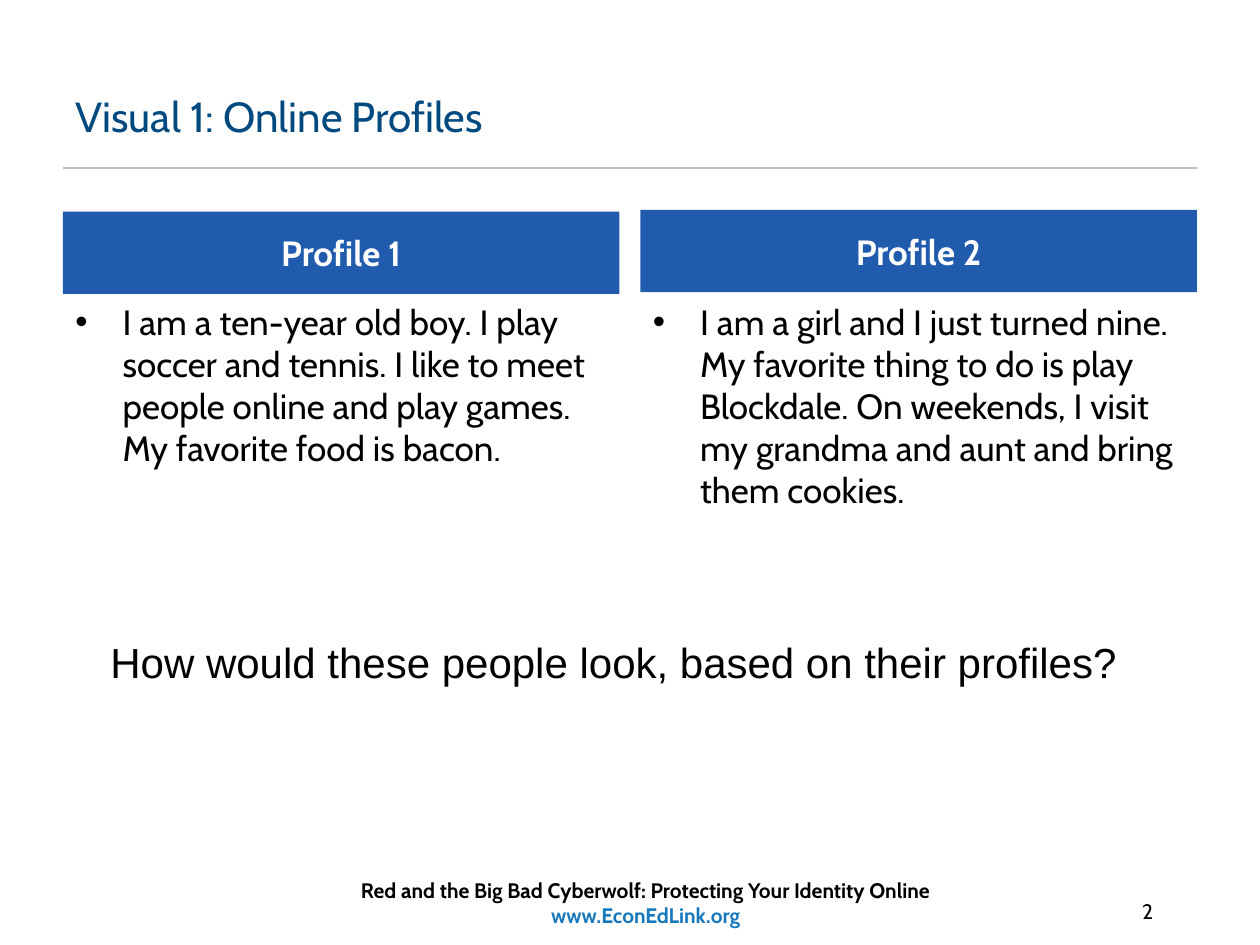
from lxml import etree
from pptx import Presentation
from pptx.dml.color import RGBColor
from pptx.enum.shapes import MSO_CONNECTOR, MSO_SHAPE
from pptx.enum.text import MSO_ANCHOR, MSO_AUTO_SIZE, PP_ALIGN
from pptx.oxml.ns import qn
from pptx.util import Pt

LEFT, MID, RIGHT = PP_ALIGN.LEFT, PP_ALIGN.CENTER, PP_ALIGN.RIGHT
TOP, CENTER = MSO_ANCHOR.TOP, MSO_ANCHOR.MIDDLE
RECT, LINE = MSO_SHAPE.RECTANGLE, MSO_CONNECTOR.STRAIGHT
FIT, FIXED = MSO_AUTO_SIZE.SHAPE_TO_FIT_TEXT, MSO_AUTO_SIZE.NONE

TITLE = "Visual 1: Online Profiles"
CARDS = [
    ("Profile 1", 121, "I am a ten-year old boy. I play soccer and tennis. "
     "I like to meet people online and play games. My favorite food is bacon."),
    ("Profile 2", 120, "I am a girl and I just turned nine. My favorite thing to do "
     "is play Blockdale. On weekends, I visit my grandma and aunt and bring them cookies."),
]
ASK = "How would these people look, based on their profiles?"
FOOT = [("Red and the Big Bad Cyberwolf: Protecting Your Identity Online", "000000", True),
        ("www.EconEdLink.org", "1578BC", True)]
PAGE = "2"
EDGE, WIDE, CARD, HEAD, BODY, INDENT = 36, 648, 318, 47, 168, 27


def color(code):
    """Turn a hex string into a colour."""
    return RGBColor.from_string(code)


def place(shape, x, y, w, h):
    """Move and size a shape in points."""
    shape.left, shape.top, shape.width, shape.height = Pt(x), Pt(y), Pt(w), Pt(h)


def write(shape, text, size=20, font="Cabin", ink="000000", bold=False,
          align=LEFT, anchor=TOP, wrap=True, fit=FIXED, bullet=False):
    """Fill a shape with a string or with (text, ink, bold) paragraphs."""
    frame = shape.text_frame
    frame.word_wrap, frame.auto_size, frame.vertical_anchor = wrap, fit, anchor
    rows = [(text, ink, bold)] if isinstance(text, str) else text
    for i, (words, tint, heavy) in enumerate(rows):
        para = frame.add_paragraph() if i else frame.paragraphs[0]
        para.alignment = align
        if bullet:
            props = para._p.get_or_add_pPr()
            props.set("marL", str(Pt(INDENT)))
            props.set("indent", str(-Pt(INDENT)))
            etree.SubElement(props, qn("a:buFont")).set("typeface", "Arial")
            etree.SubElement(props, qn("a:buChar")).set("char", "•")
        run = para.add_run()
        run.text = words
        run.font.name, run.font.size, run.font.bold = font, Pt(size), heavy
        run.font.color.rgb = color(tint)


def label(slide, text, x, y, w, h, **style):
    """Add a text box and write in it."""
    box = slide.shapes.add_textbox(Pt(x), Pt(y), Pt(w), Pt(h))
    write(box, text, **style)


def rule(slide, x, y, w):
    """Draw the grey line under the title."""
    line = slide.shapes.add_connector(LINE, Pt(x), Pt(y), Pt(x + w), Pt(y))
    line.line.color.rgb = color("C0C0C0")
    line.line.width = Pt(1.25)
    etree.SubElement(line._element.spPr, qn("a:effectLst"))


def banner(slide, text, x, y):
    """Draw the blue heading of a profile."""
    bar = slide.shapes.add_shape(RECT, Pt(x), Pt(y), Pt(CARD), Pt(HEAD))
    bar.shadow.inherit = False
    bar.fill.solid()
    bar.fill.fore_color.rgb = color("215BAE")
    bar.line.fill.background()
    write(bar, text, ink="FFFFFF", bold=True, align=MID, anchor=CENTER)


def main():
    """Build and save the slide."""
    deck = Presentation()
    deck.slide_width, deck.slide_height = Pt(720), Pt(540)
    slide = deck.slides.add_slide(deck.slide_layouts[5])
    title = slide.shapes.title
    place(title, EDGE, 48, WIDE, 48)
    write(title, TITLE, size=24, ink="004A80")
    rule(slide, EDGE, 96, WIDE)
    for i, (name, top, text) in enumerate(CARDS):
        x = EDGE + i * (WIDE - CARD)
        banner(slide, name, x, top)
        label(slide, text, x, BODY, CARD, 311, bullet=True)
    label(slide, ASK, 56, 360, 595, 36, size=24, font="Arial", wrap=False, fit=FIT)
    label(slide, FOOT, 58, 498, 622, 36, size=12, align=MID)
    label(slide, PAGE, 516, 510, 150, 36, size=12, align=RIGHT)
    deck.save("out.pptx")


if __name__ == "__main__":
    main()
